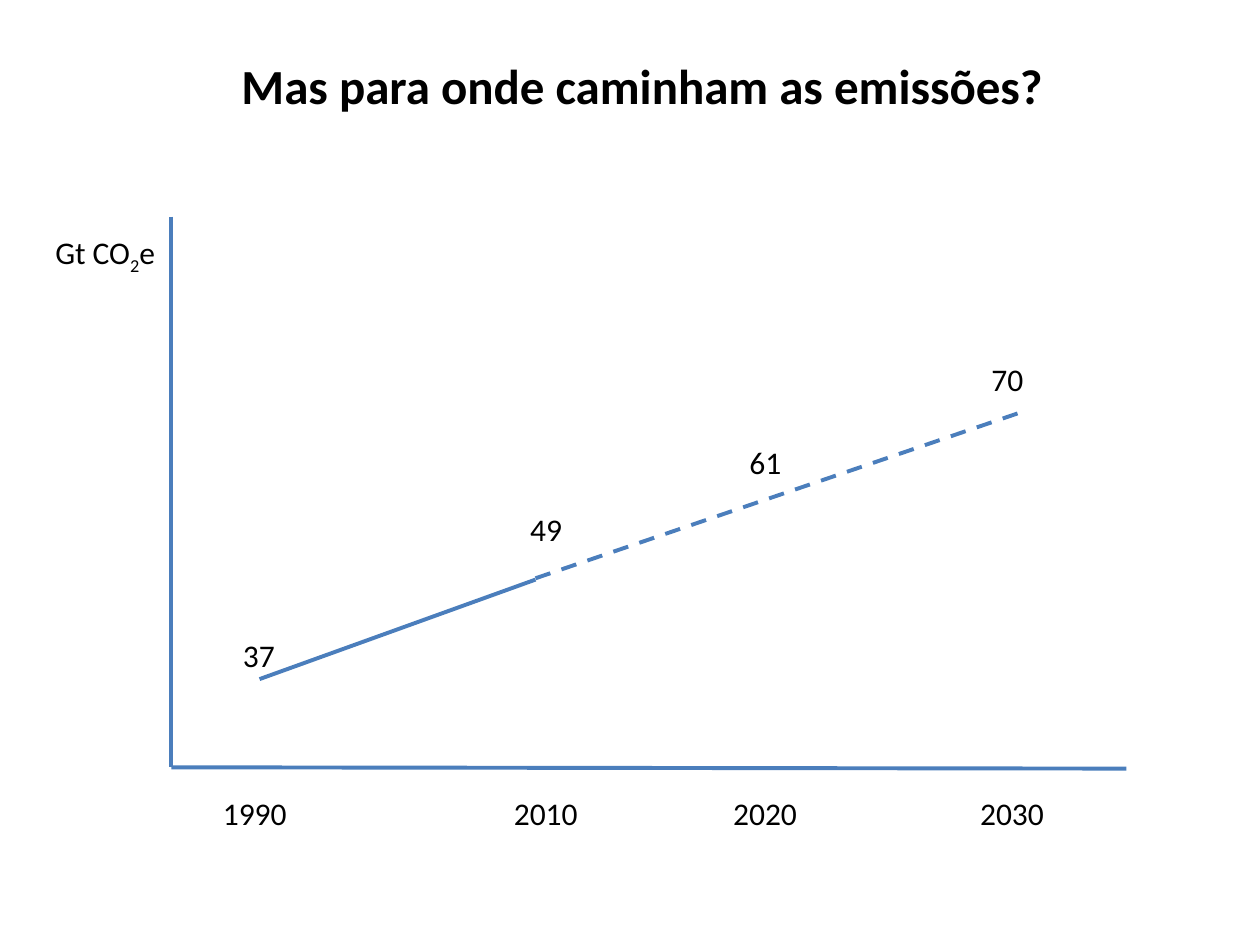
from dataclasses import dataclass
from typing import Optional

from lxml.etree import SubElement
from pptx import Presentation
from pptx.dml.color import RGBColor as RGB
from pptx.enum.dml import MSO_LINE as Dash
from pptx.enum.shapes import MSO_CONNECTOR as Connector
from pptx.enum.text import MSO_ANCHOR as Anchor, MSO_AUTO_SIZE as AutoSize, PP_ALIGN as Align
from pptx.oxml.ns import qn
from pptx.util import Inches, Pt


@dataclass(frozen=True)
class Theme:
    font: str = "Calibri"
    text: RGB = RGB(0x00, 0x00, 0x00)
    line: RGB = RGB(0x4B, 0x7E, 0xBC)
    title_size: float = 28
    label_size: float = 18
    line_width: float = 2.25


@dataclass(frozen=True)
class Label:
    text: str
    left: float
    top: float
    width: float


@dataclass(frozen=True)
class Segment:
    start: tuple[float, float]
    end: tuple[float, float]
    dash: Optional[Dash] = None


THEME = Theme()
LABEL_HEIGHT = 0.4
YEAR_TOP, YEAR_WIDTH, VALUE_WIDTH = 6.25, 0.71, 0.46
ORIGIN = (1.36, 6.09)

YEARS = [Label(year, left, YEAR_TOP, YEAR_WIDTH) for year, left in
         [("1990", 1.67), ("2010", 3.98), ("2020", 5.72), ("2030", 7.68)]]
VALUES = [Label(value, left, top, VALUE_WIDTH) for value, left, top in
          [("37", 1.83, 5), ("49", 4.11, 4), ("61", 5.85, 3.47), ("70", 7.77, 2.81)]]
AXES = [Segment((1.36, 1.72), ORIGIN), Segment(ORIGIN, (8.94, 6.1))]
TREND = [Segment((2.06, 5.39), (4.25, 4.6)),
         Segment((4.25, 4.59), (8.08, 3.28), Dash.DASH)]


def add_text(p, text: str, *, size: float = THEME.label_size,
             bold: bool = False, baseline: int = 0) -> None:
    """Add a formatted run; baseline is a percentage of the type size."""
    r = p.add_run()
    r.text = text
    r.font.name = THEME.font
    r.font.size = Pt(size)
    r.font.bold = bold
    r.font.color.rgb = THEME.text
    if baseline:
        r._r.get_or_add_rPr().set("baseline", str(baseline * 1000))


def add_label(slide, label: Label):
    """Add an unwrapped label and return its paragraph."""
    sp = slide.shapes.add_textbox(Inches(label.left), Inches(label.top),
                                  Inches(label.width), Inches(LABEL_HEIGHT))
    tf = sp.text_frame
    tf.word_wrap = False
    tf.auto_size = AutoSize.SHAPE_TO_FIT_TEXT
    p = tf.paragraphs[0]
    add_text(p, label.text)
    return p


def add_segment(slide, segment: Segment) -> None:
    points = [Inches(v) for v in segment.start + segment.end]
    line = slide.shapes.add_connector(Connector.STRAIGHT, *points)
    line.line.color.rgb = THEME.line
    line.line.width = Pt(THEME.line_width)
    if segment.dash is not None:
        line.line.dash_style = segment.dash
    SubElement(line._element.spPr, qn("a:effectLst"))


def set_title(slide, text: str) -> None:
    sp = slide.shapes.title
    sp.left, sp.top, sp.width, sp.height = map(Inches, (0.84, 0.36, 8.51, 0.63))
    tf = sp.text_frame
    tf.word_wrap = True
    tf.auto_size = AutoSize.NONE
    tf.vertical_anchor = Anchor.MIDDLE
    p = tf.paragraphs[0]
    p.alignment = Align.CENTER
    add_text(p, text, size=THEME.title_size, bold=True)


def main() -> None:
    prs = Presentation()
    prs.slide_width, prs.slide_height = Inches(10), Inches(7.5)
    s = prs.slides.add_slide(prs.slide_layouts[5])
    set_title(s, "Mas para onde caminham as emissões?")

    # Axes and emissions path
    for segment in AXES + TREND:
        add_segment(s, segment)

    # Years and values
    for label in YEARS + VALUES:
        add_label(s, label)

    # Unit, with a subscript
    unit = add_label(s, Label("Gt CO", 0.34, 1.8, 1.02))
    add_text(unit, "2", baseline=-25)
    add_text(unit, "e")

    prs.save("out.pptx")


if __name__ == "__main__":
    main()
